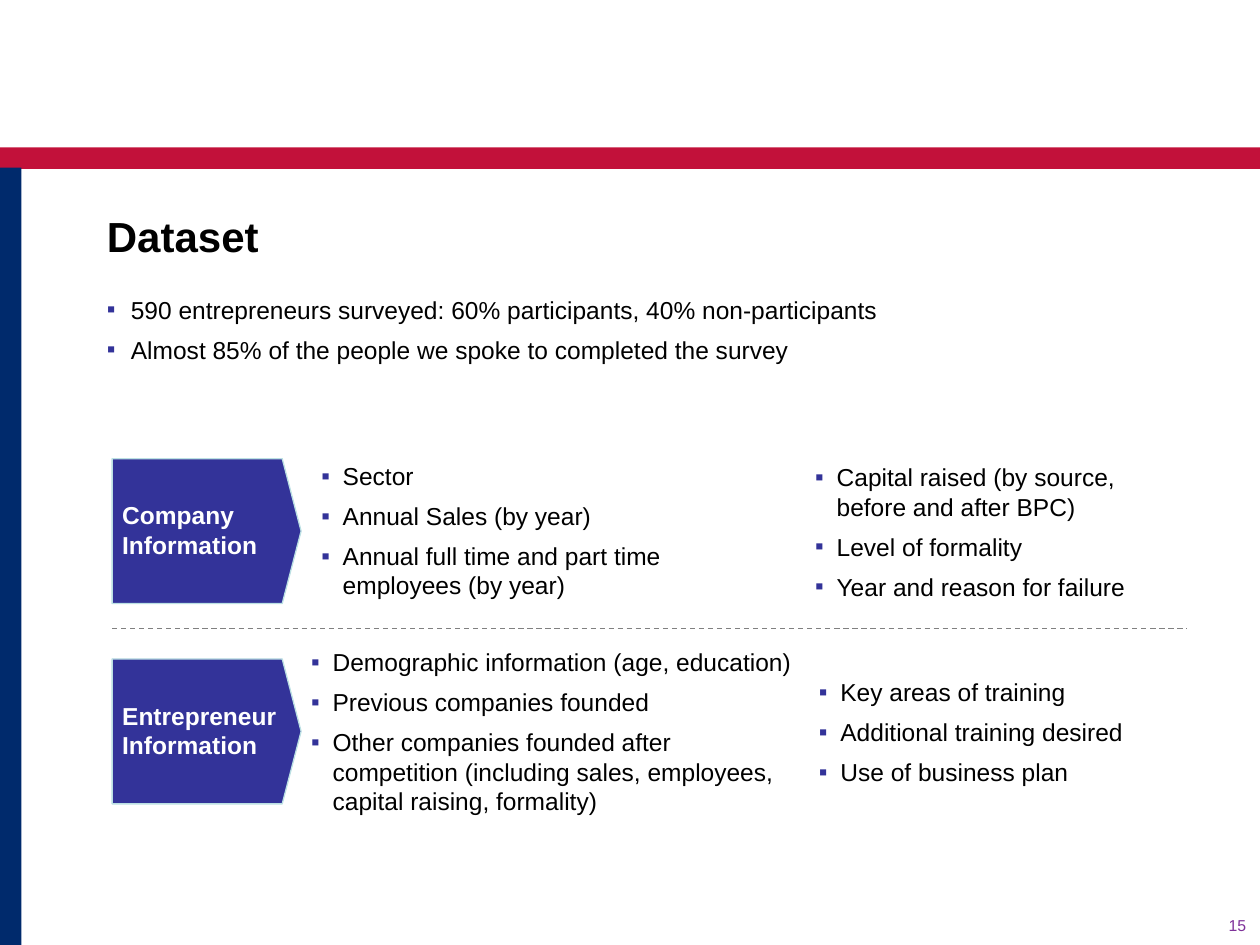
from lxml import etree
from pptx import Presentation
from pptx.dml.color import RGBColor
from pptx.enum.dml import MSO_LINE
from pptx.enum.shapes import MSO_CONNECTOR, MSO_SHAPE
from pptx.enum.text import MSO_ANCHOR, PP_ALIGN
from pptx.oxml.ns import qn
from pptx.util import Inches, Pt

RECTANGLE, PENTAGON = MSO_SHAPE.RECTANGLE, MSO_SHAPE.PENTAGON
STRAIGHT, DASH = MSO_CONNECTOR.STRAIGHT, MSO_LINE.DASH
TOP, MIDDLE = MSO_ANCHOR.TOP, MSO_ANCHOR.MIDDLE
LEFT, RIGHT = PP_ALIGN.LEFT, PP_ALIGN.RIGHT

FONT = "Arial"
COLORS = {
    "red": "C2113A", "navy": "002A6C", "indigo": "333399", "pale": "BBE0E3",
    "gray": "808080", "purple": "7F329A", "black": "000000", "white": "FFFFFF",
}

TITLE = "Dataset"
PAGE_NUMBER = "15"
SUMMARY = [
    "590 entrepreneurs surveyed: 60% participants, 40% non-participants",
    "Almost 85% of the people we spoke to completed the survey",
]
# Each section: label, top of its arrow, and columns of (box, bullets)
SECTIONS = [
    ("Company Information", 3.64, [
        ((2.55, 3.66, 3.42, 1.1), [
            "Sector",
            "Annual Sales (by year)",
            "Annual full time and part time employees (by year)",
        ]),
        ((6.47, 3.67, 2.82, 1.1), [
            "Capital raised (by source, before and after BPC)",
            "Level of formality",
            "Year and reason for failure",
        ]),
    ]),
    ("Entrepreneur Information", 5.23, [
        ((2.47, 5.14, 3.83, 1.33), [
            "Demographic information (age, education)",
            "Previous companies founded",
            "Other companies founded after competition "
            "(including sales, employees, capital raising, formality)",
        ]),
        ((6.5, 5.38, 2.47, 0.86), [
            "Key areas of training",
            "Additional training desired",
            "Use of business plan",
        ]),
    ]),
]
ARROW_LEFT, ARROW_WIDTH, ARROW_HEIGHT, ARROW_TIP = 0.89, 1.5, 1.15, 0.15
DIVIDER_Y, DIVIDER_RIGHT = 4.99, 9.42


def rgb(name):
    return RGBColor.from_string(COLORS[name])


def add_block(shapes, kind, box, fill):
    shape = shapes.add_shape(kind, *map(Inches, box))
    shape.shadow.inherit = False
    shape.fill.solid()
    shape.fill.fore_color.rgb = rgb(fill)
    shape.line.fill.background()
    return shape


def add_text(shapes, box, lines, size=14, color="black", bold=False,
             anchor=TOP, align=LEFT, insets=(0, 0, 0, 0)):
    """Add a wrapped text box with one paragraph per line; return its paragraphs."""
    frame = shapes.add_textbox(*map(Inches, box)).text_frame
    frame.word_wrap = True
    frame.vertical_anchor = anchor
    (frame.margin_left, frame.margin_top,
     frame.margin_right, frame.margin_bottom) = map(Inches, insets)
    frame.text = "\n".join(lines)
    for paragraph in frame.paragraphs:
        paragraph.alignment = align
        font = paragraph.runs[0].font
        font.name, font.size, font.bold = FONT, Pt(size), bold
        font.color.rgb = rgb(color)
    return frame.paragraphs


def add_bullets(paragraphs, indent, before, after):
    for paragraph in paragraphs:
        paragraph.space_before, paragraph.space_after = Pt(before), Pt(after)
        properties = paragraph._p.get_or_add_pPr()
        properties.set("marL", str(Inches(indent)))
        properties.set("indent", str(-Inches(indent)))
        color = etree.SubElement(properties, qn("a:buClr"))
        etree.SubElement(color, qn("a:srgbClr"), val=COLORS["indigo"])
        etree.SubElement(properties, qn("a:buFont"), typeface=FONT)
        etree.SubElement(properties, qn("a:buChar"), char="▪")


def add_section_arrow(shapes, label, top):
    group = shapes.add_group_shape().shapes
    arrow = add_block(group, PENTAGON,
                      (ARROW_LEFT, top, ARROW_WIDTH, ARROW_HEIGHT), "indigo")
    arrow.adjustments[0] = ARROW_TIP / ARROW_HEIGHT
    arrow.line.color.rgb = rgb("pale")
    arrow.line.width = Pt(0.75)
    add_text(group, (ARROW_LEFT + 0.04, top + 0.07, 1.3, 0.99), [label],
             color="white", bold=True, anchor=MIDDLE, insets=(0.04, 0, 0, 0))


def add_divider(shapes):
    line = shapes.add_connector(STRAIGHT, Inches(ARROW_LEFT), Inches(DIVIDER_Y),
                                Inches(DIVIDER_RIGHT), Inches(DIVIDER_Y))
    line.line.color.rgb = rgb("gray")
    line.line.width = Pt(0.75)
    line.line.dash_style = DASH
    etree.SubElement(line._element.spPr, qn("a:effectLst"))


def main():
    presentation = Presentation()
    presentation.slide_width, presentation.slide_height = Inches(10), Inches(7.5)
    shapes = presentation.slides.add_slide(presentation.slide_layouts[6]).shapes

    add_block(shapes, RECTANGLE, (0, 1.17, 10, 0.17), "red")
    add_block(shapes, RECTANGLE, (0, 1.33, 0.17, 6.17), "navy")
    add_text(shapes, (0.75, 1.58, 8.5, 0.67), [TITLE], size=24, bold=True,
             insets=(0.1, 0.09, 0.1, 0.05))
    summary = add_text(shapes, (0.75, 2.29, 9.15, 0.74), SUMMARY,
                       insets=(0.1, 0.05, 0.1, 0.05))
    add_bullets(summary, indent=0.19, before=3, after=3)

    for label, top, columns in SECTIONS:
        add_section_arrow(shapes, label, top)
        for box, lines in columns:
            bullets = add_text(shapes, box, lines, anchor=MIDDLE)
            add_bullets(bullets, indent=0.17, before=0, after=6)
    add_divider(shapes)
    add_text(shapes, (8.92, 7.27, 0.97, 0.15), [PAGE_NUMBER], size=9,
             color="purple", align=RIGHT)

    presentation.save("out.pptx")


if __name__ == "__main__":
    main()
